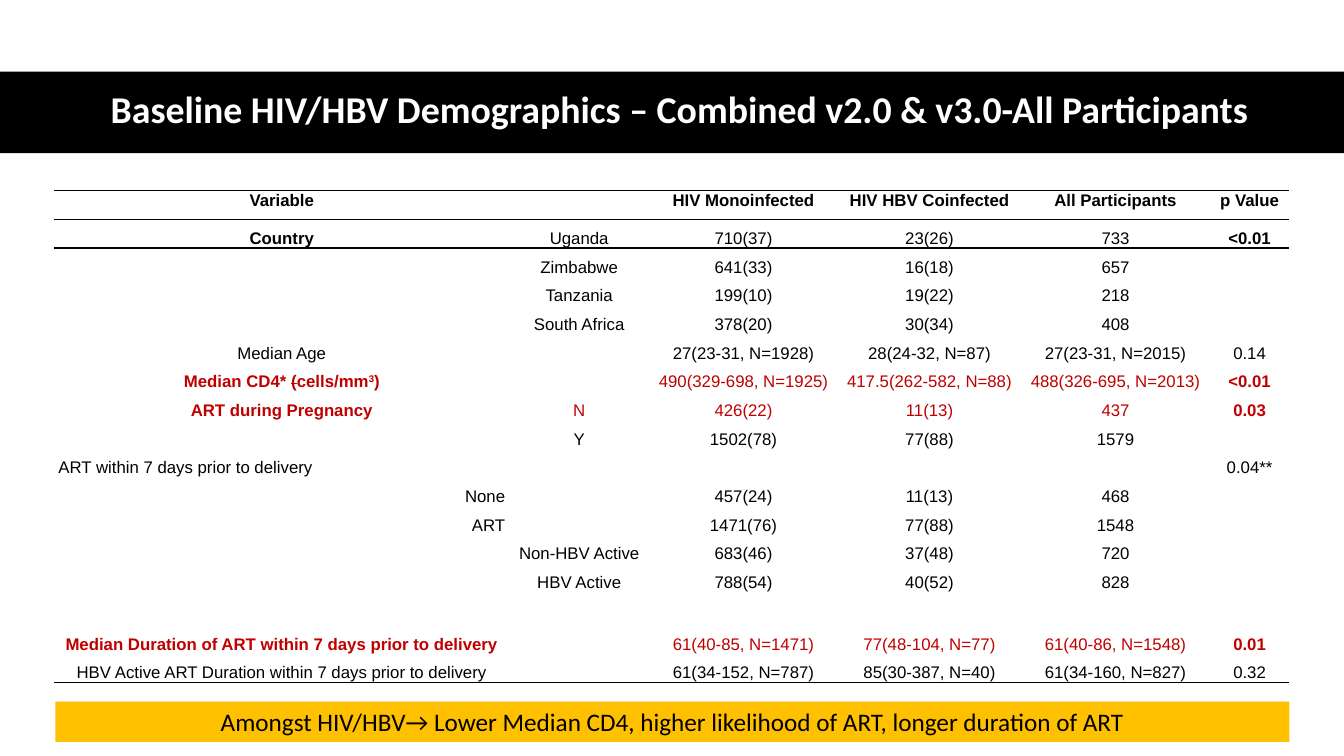
from lxml import etree
from pptx import Presentation
from pptx.dml.color import RGBColor
from pptx.enum.shapes import MSO_SHAPE
from pptx.enum.text import MSO_ANCHOR, MSO_AUTO_SIZE, PP_ALIGN
from pptx.oxml import parse_xml
from pptx.oxml.ns import nsdecls, qn
from pptx.util import Inches, Pt

COLORS = {"black": "000000", "white": "FFFFFF", "red": "C00000", "gold": "FFC000"}
COLUMN_WIDTHS = [4.51, 1.39, 1.87, 1.82, 1.87, 0.79]
ROW_HEIGHT = 0.285
TALL_ROW, TALL_HEIGHT = 14, 0.61
NO_STYLE = "{2D5ABB26-0587-4C30-8999-92F81FD0307C}"
ALIGNMENTS = {
    "ART within 7 days prior to delivery": PP_ALIGN.LEFT,
    "None": PP_ALIGN.RIGHT,
    "ART": PP_ALIGN.RIGHT,
}
CD4_RUNS = [
    ("Median CD4* ", {}),
    ("(", {"strike": "sngStrike"}),
    ("cells/mm", {}),
    ("3", {"baseline": "30000"}),
    (")", {}),
]
ROWS = [
    ("header", ["Variable", "", "HIV Monoinfected", "HIV HBV Coinfected", "All Participants", "p Value"]),
    ("key", ["Country", "Uganda", "710(37)", "23(26)", "733", "<0.01"]),
    ("plain", ["", "Zimbabwe", "641(33)", "16(18)", "657", ""]),
    ("plain", ["", "Tanzania", "199(10)", "19(22)", "218", ""]),
    ("plain", ["", "South Africa", "378(20)", "30(34)", "408", ""]),
    ("plain", ["Median Age", "", "27(23-31, N=1928)", "28(24-32, N=87)", "27(23-31, N=2015)", "0.14"]),
    ("red", [CD4_RUNS, "", "490(329-698, N=1925)", "417.5(262-582, N=88)", "488(326-695, N=2013)", "<0.01"]),
    ("red", ["ART during Pregnancy", "N", "426(22)", "11(13)", "437", "0.03"]),
    ("plain", ["", "Y", "1502(78)", "77(88)", "1579", ""]),
    ("plain", ["ART within 7 days prior to delivery", "", "", "", "", "0.04**"]),
    ("plain", ["None", "", "457(24)", "11(13)", "468", ""]),
    ("plain", ["ART", "", "1471(76)", "77(88)", "1548", ""]),
    ("plain", ["", "Non-HBV Active", "683(46)", "37(48)", "720", ""]),
    ("plain", ["", "HBV Active", "788(54)", "40(52)", "828", ""]),
    ("red", ["Median Duration of ART within 7 days prior to delivery", "",
             "61(40-85, N=1471)", "77(48-104, N=77)", "61(40-86, N=1548)", "0.01"]),
    ("plain", ["HBV Active ART Duration within 7 days prior to delivery", "",
               "61(34-152, N=787)", "85(30-387, N=40)", "61(34-160, N=827)", "0.32"]),
]


def rgb(name):
    """Return the named colour."""
    return RGBColor.from_string(COLORS[name])


def set_font(paragraph, family, size, color, bold=False):
    """Format all text of a paragraph."""
    font = paragraph.font
    font.name, font.size, font.bold = family, Pt(size), bold
    font.color.rgb = rgb(color)


def add_bar(slide, left, top, width, height, color):
    """Add a plain filled rectangle."""
    bar = slide.shapes.add_shape(
        MSO_SHAPE.RECTANGLE, Inches(left), Inches(top), Inches(width), Inches(height))
    bar.shadow.inherit = False
    bar.fill.solid()
    bar.fill.fore_color.rgb = rgb(color)
    bar.line.fill.background()
    return bar


def add_title(slide, text):
    """Place the title over its black band."""
    band = add_bar(slide, 0, 0.71, 13.33, 0.81, "black")
    slide.shapes._spTree.insert(2, band._element)
    title = slide.shapes.title
    title.left, title.top = Inches(0.61), Inches(0.7)
    title.width, title.height = Inches(12.26), Inches(0.81)
    frame = title.text_frame
    frame.text = text
    frame.auto_size = MSO_AUTO_SIZE.NONE
    frame.vertical_anchor = MSO_ANCHOR.MIDDLE
    paragraph = frame.paragraphs[0]
    paragraph.alignment = PP_ALIGN.CENTER
    paragraph.line_spacing = 0.9
    set_font(paragraph, "Calibri", 27, "white", True)


def add_borders(cell, sides):
    """Draw black lines on the given sides of a cell."""
    for side in sides:
        cell._tc.get_or_add_tcPr().append(parse_xml(
            f'<a:ln{side} {nsdecls("a")} w="12700"><a:solidFill>'
            f'<a:srgbClr val="{COLORS["black"]}"/></a:solidFill></a:ln{side}>'))


def fill_cell(cell, content, color, bold, anchor):
    """Write and format the content of one table cell."""
    cell.margin_left = cell.margin_right = Inches(0.04)
    cell.margin_top, cell.margin_bottom = Inches(0.01), 0
    cell.vertical_anchor = anchor
    cell.fill.background()
    paragraph = cell.text_frame.paragraphs[0]
    if not content:
        etree.SubElement(paragraph._p, qn("a:endParaRPr"), sz="1200")
        return
    runs = [(content, {})] if isinstance(content, str) else content
    for text, attributes in runs:
        run = paragraph.add_run()
        run.text = text
        for key, value in attributes.items():
            run._r.get_or_add_rPr().set(key, value)
    label = "".join(text for text, _ in runs)
    paragraph.alignment = ALIGNMENTS.get(label, PP_ALIGN.CENTER)
    paragraph.space_before = paragraph.space_after = Pt(3.4)
    set_font(paragraph, "Arial", 12, color, bold)


def add_demographics_table(slide):
    """Add the table of baseline demographics."""
    frame = slide.shapes.add_table(
        len(ROWS), len(COLUMN_WIDTHS), Inches(0.54), Inches(1.89), Inches(12.25), Inches(4.89))
    table = frame.table
    table.first_row = table.horz_banding = False
    table._tbl.tblPr.find(qn("a:tableStyleId")).text = NO_STYLE
    for column, width in zip(table.columns, COLUMN_WIDTHS):
        column.width = Inches(width)
    borders = {0: "TB", 1: "T", len(ROWS) - 1: "B"}
    for row_index, (style, contents) in enumerate(ROWS):
        height = TALL_HEIGHT if row_index == TALL_ROW else ROW_HEIGHT
        table.rows[row_index].height = Inches(height)
        header = style == "header"
        anchor = MSO_ANCHOR.TOP if header else MSO_ANCHOR.BOTTOM
        color = "red" if style == "red" else "black"
        for column_index, content in enumerate(contents):
            cell = table.cell(row_index, column_index)
            bold = header or (style != "plain" and column_index in (0, 5))
            add_borders(cell, borders.get(row_index, ""))
            fill_cell(cell, content, color, bold, anchor)


def add_takeaway(slide, text):
    """Add the gold bar with the main message."""
    bar = add_bar(slide, 0.55, 6.96, 12.24, 0.4, "gold")
    frame = bar.text_frame
    frame.word_wrap = True
    frame.text = text
    frame.vertical_anchor = MSO_ANCHOR.TOP
    paragraph = frame.paragraphs[0]
    paragraph.alignment = PP_ALIGN.CENTER
    set_font(paragraph, "Calibri", 18, "black")


def main():
    """Build and save the slide."""
    presentation = Presentation()
    presentation.slide_width, presentation.slide_height = Inches(13.33), Inches(7.5)
    slide = presentation.slides.add_slide(presentation.slide_layouts[5])
    add_title(slide, "Baseline HIV/HBV Demographics – Combined v2.0 & v3.0-All Participants")
    add_demographics_table(slide)
    add_takeaway(slide, "Amongst HIV/HBV→ Lower Median CD4, higher likelihood of ART, longer duration of ART")
    presentation.save("out.pptx")


if __name__ == "__main__":
    main()
